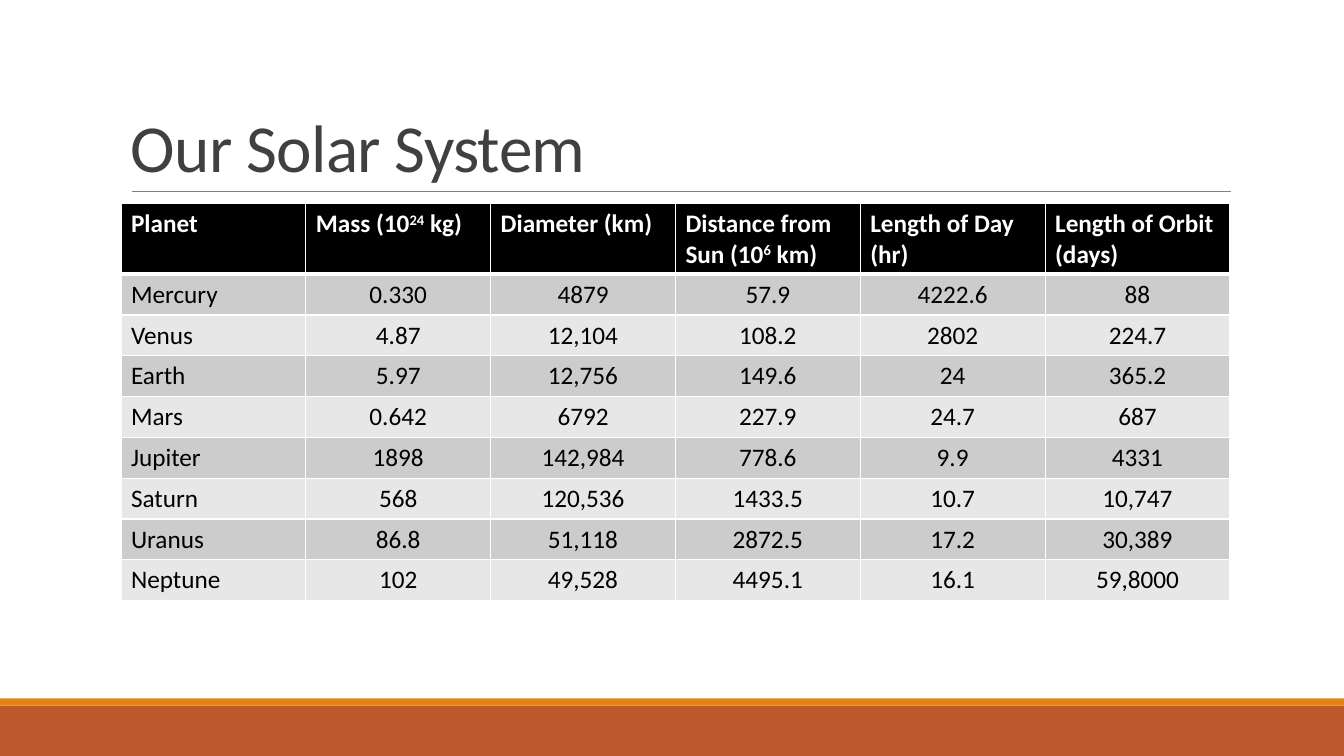
from typing import NamedTuple

from lxml import etree
from pptx import Presentation
from pptx import util as u
from pptx.dml.color import RGBColor
from pptx.enum import shapes, text
from pptx.oxml.ns import qn

FONT = "Calibri"
LEFT, WIDTH = 1.2, 11
HEAD_TALL, ROW_TALL = 0.7, 0.405


class Bar(NamedTuple):
    top: float
    tall: float
    color: str


class Planet(NamedTuple):
    name: str
    mass: str
    width: str
    sun: str
    day: str
    orbit: str


BARS = [Bar(7, 0.5, "BD582C"), Bar(6.93, 0.07, "E48312")]

# Text between carets is raised.
HEADS = Planet("Planet", "Mass (10^24^ kg)", "Diameter (km)",
               "Distance from Sun (10^6^ km)", "Length of Day (hr)",
               "Length of Orbit (days)")
PLANETS = [
    Planet("Mercury", "0.330", "4879", "57.9", "4222.6", "88"),
    Planet("Venus", "4.87", "12,104", "108.2", "2802", "224.7"),
    Planet("Earth", "5.97", "12,756", "149.6", "24", "365.2"),
    Planet("Mars", "0.642", "6792", "227.9", "24.7", "687"),
    Planet("Jupiter", "1898", "142,984", "778.6", "9.9", "4331"),
    Planet("Saturn", "568", "120,536", "1433.5", "10.7", "10,747"),
    Planet("Uranus", "86.8", "51,118", "2872.5", "17.2", "30,389"),
    Planet("Neptune", "102", "49,528", "4495.1", "16.1", "59,8000"),
]


def paint(fill, color: str) -> None:
    fill.solid()
    fill.fore_color.rgb = RGBColor.from_string(color)


def write(frame, words: str, *, size: float = 18, color: str = "000000",
          bold: bool = False, center: bool = False, space: float = 0,
          lead: float = 1) -> None:
    """Fill a text frame, raising the parts between carets."""
    para = frame.paragraphs[0]
    para.alignment = text.PP_ALIGN.CENTER if center else text.PP_ALIGN.LEFT
    para.line_spacing = lead
    for pos, part in enumerate(words.split("^")):
        run = para.add_run()
        run.text = part
        run.font.name = FONT
        run.font.size = u.Pt(size)
        run.font.bold = bold
        paint(run.font.fill, color)
        props = run._r.get_or_add_rPr()
        if pos % 2:
            props.set("baseline", "30000")
        if space:
            props.set("spc", str(round(space * 100)))


def edge(cell, side: str, points: float) -> None:
    """Give one side of a cell a white border."""
    line = etree.SubElement(cell._tc.get_or_add_tcPr(), qn(f"a:ln{side}"),
                            w=str(u.Pt(points)))
    fill = etree.SubElement(line, qn("a:solidFill"))
    etree.SubElement(fill, qn("a:srgbClr"), val="FFFFFF")


def add_bar(slide, bar: Bar) -> None:
    shape = slide.shapes.add_shape(
        shapes.MSO_SHAPE.RECTANGLE, 0, u.Inches(bar.top),
        u.Inches(13.33), u.Inches(bar.tall))
    shape.shadow.inherit = False
    shape.line.fill.background()
    paint(shape.fill, bar.color)


def add_rule(slide) -> None:
    rule = slide.shapes.add_connector(
        shapes.MSO_CONNECTOR.STRAIGHT, u.Inches(1.31), u.Inches(1.9),
        u.Inches(12.21), u.Inches(1.9))
    paint(rule.line.fill, "808080")
    rule.line.width = u.Pt(0.5)
    etree.SubElement(rule._element.spPr, qn("a:effectLst"))


def add_title(slide) -> None:
    box = slide.shapes.add_textbox(u.Inches(LEFT), u.Inches(0.31),
                                   u.Inches(WIDTH), u.Inches(1.59))
    frame = box.text_frame
    frame.word_wrap = True
    frame.vertical_anchor = text.MSO_ANCHOR.BOTTOM
    write(frame, "Our Solar System", size=48, color="404040", space=-0.5,
          lead=0.85)


def add_grid(slide) -> None:
    rows = [HEADS, *PLANETS]
    tall = HEAD_TALL + ROW_TALL * len(PLANETS)
    table = slide.shapes.add_table(
        len(rows), len(HEADS), u.Inches(LEFT), u.Inches(2.02),
        u.Inches(WIDTH), u.Inches(tall)).table
    for col in table.columns:
        col.width = u.Inches(WIDTH / len(HEADS))
    for r, row in enumerate(rows):
        head = r == 0
        table.rows[r].height = u.Inches(HEAD_TALL if head else ROW_TALL)
        shade = "000000" if head else "CCCCCC" if r % 2 else "E7E7E7"
        for c, words in enumerate(row):
            cell = table.cell(r, c)
            for side in "LRTB":
                thick = (r, side) in ((0, "B"), (1, "T"))
                edge(cell, side, 3 if thick else 1)
            paint(cell.fill, shade)
            write(cell.text_frame, words, bold=head,
                  color="FFFFFF" if head else "000000",
                  center=not head and c > 0)


def main() -> None:
    deck = Presentation()
    deck.slide_width, deck.slide_height = u.Inches(13.33), u.Inches(7.5)
    slide = deck.slides.add_slide(deck.slide_layouts[6])
    for bar in BARS:
        add_bar(slide, bar)
    add_rule(slide)
    add_title(slide)
    add_grid(slide)
    deck.save("out.pptx")


if __name__ == "__main__":
    main()
